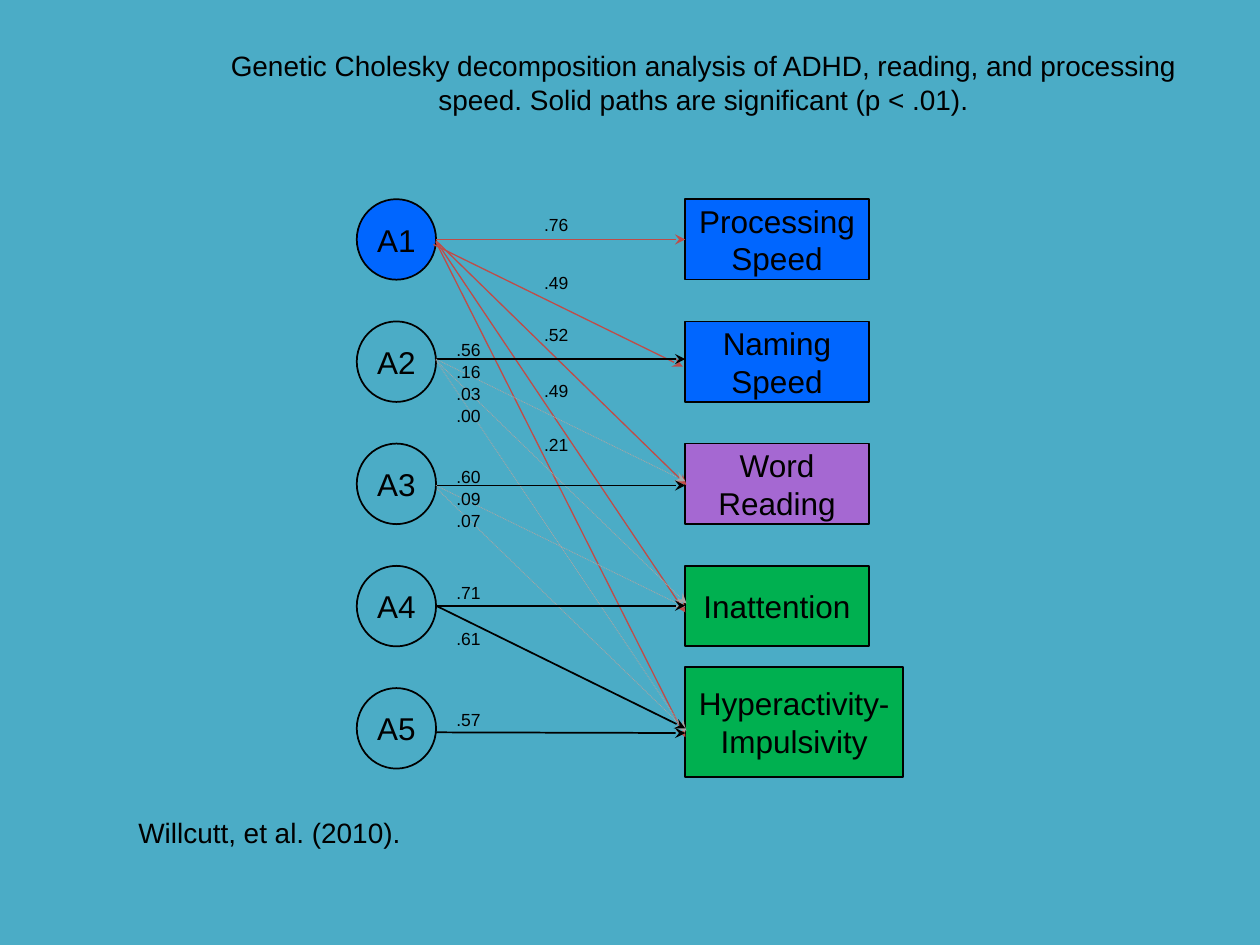
from dataclasses import dataclass, field

from lxml.etree import SubElement
from pptx import Presentation
from pptx.dml.color import RGBColor
from pptx.enum.dml import MSO_LINE as Dash
from pptx.enum.shapes import MSO_CONNECTOR as Link, MSO_SHAPE as Shape
from pptx.enum.text import MSO_ANCHOR as Anchor, MSO_AUTO_SIZE as Fit, PP_ALIGN as Align
from pptx.oxml.ns import qn
from pptx.slide import Slide
from pptx.util import Pt


def colour(code):
    return RGBColor.from_string(code)


@dataclass
class PathDiagram:
    """Draws the parts of a path diagram on one slide, in points."""

    slide: Slide
    ink: str = "000000"
    font: dict = field(default_factory=lambda: {"name": "Arial", "bold": False})

    def backdrop(self, code):
        fill = self.slide.background.fill
        fill.solid()
        fill.fore_color.rgb = colour(code)

    def wording(self, frame, words, size, align, inset, **layout):
        margins = {"margin_left": Pt(inset), "margin_right": Pt(inset)}
        for name, value in {"word_wrap": True, **margins, **layout}.items():
            setattr(frame, name, value)
        paragraph = frame.paragraphs[0]
        paragraph.alignment = align
        run = paragraph.add_run()
        run.text = words
        for name, value in {**self.font, "size": Pt(size)}.items():
            setattr(run.font, name, value)
        run.font.color.rgb = colour(self.ink)

    def text(self, words, bounds, size, align=Align.LEFT, inset=7.2, anchor=Anchor.MIDDLE):
        box = self.slide.shapes.add_textbox(*map(Pt, bounds))
        self.wording(box.text_frame, words, size, align, inset,
                     vertical_anchor=anchor, auto_size=Fit.SHAPE_TO_FIT_TEXT)

    def node(self, kind, words, bounds, fill, inset=7.2):
        node = self.slide.shapes.add_shape(kind, *map(Pt, bounds))
        node.shadow.inherit = False
        if fill:
            node.fill.solid()
            node.fill.fore_color.rgb = colour(fill)
        else:
            node.fill.background()
        node.line.color.rgb = colour(self.ink)
        node.line.width = Pt(1)
        self.wording(node.text_frame, words, 18, Align.CENTER, inset,
                     vertical_anchor=Anchor.MIDDLE)

    def arrow(self, ends, code, width, dash):
        arrow = self.slide.shapes.add_connector(Link.STRAIGHT, *map(Pt, ends))
        arrow.line.color.rgb = colour(code)
        for name, value in {"width": Pt(width), "dash_style": dash}.items():
            setattr(arrow.line, name, value)
        properties = arrow.element.find(qn("p:spPr"))
        SubElement(properties.find(qn("a:ln")), qn("a:tailEnd"), type="stealth")
        SubElement(properties, qn("a:effectLst"))


FIRST_TOP, ROW_STEP, NODE_HEIGHT = 113.8, 69.85, 46
FACTOR_LEFT, FACTOR_WIDTH = 203.9, 45.3
TRAIT_LEFT, TRAIT_WIDTH = 391.5, 105.1
PATH_LEFT, PATH_SPAN = 249.1, 142.5
BLUE, PURPLE, GREEN = "0066FF", "A568D2", "00B050"

SHARED = ("BF4C48", 0.75, None)
SOLID = ("000000", 1, None)
DOTTED = ("A6A6A6", 0.5, Dash.ROUND_DOT)

TRAITS = [("Processing Speed", BLUE), ("Naming Speed", BLUE),
          ("Word Reading", PURPLE), ("Inattention", GREEN)]

PATHS = [
    (SHARED, [(0, 136.8, 136.8), (-1.4, 139.7, 209.5), (0.7, 138.2, 277.2),
              (0, 137.5, 349.9), (0, 138.2, 421.2)]),
    (SOLID, [(0, 205.2, 205.2)]),
    (DOTTED, [(0, 205.2, 275), (0.7, 206.6, 344.9), (0, 205.9, 418.3)]),
    (SOLID, [(0, 277.4, 277.4)]),
    (DOTTED, [(0, 277.4, 347), (0.7, 279.4, 417.6)]),
    (SOLID, [(0, 346.1, 346.1), (0, 346.1, 416.2), (0, 418.5, 418.9)]),
]

LOADINGS = [
    (310.2, [(".76", 118.8), (".49", 151.7), (".52", 181.4), (".49", 213.5), (".21", 244.6)]),
    (260.1, [(".56", 190.3), (".16", 202.8), (".03", 215.4), (".00", 228.2),
             (".60", 262.6), (".09", 275.2), (".07", 287.8),
             (".71", 329), (".61", 355.2), (".57", 401.6)]),
]


def main():
    deck = Presentation()
    deck.slide_width, deck.slide_height = Pt(720), Pt(540)
    diagram = PathDiagram(deck.slides.add_slide(deck.slide_layouts[6]))
    diagram.backdrop("4BACC6")
    diagram.text("Genetic Cholesky decomposition analysis of ADHD, reading, and processing "
                 "speed. Solid paths are significant (p < .01).",
                 (120, 24, 564, 46), 16, Align.CENTER)

    for row in range(5):
        bounds = (FACTOR_LEFT, FIRST_TOP + row * ROW_STEP, FACTOR_WIDTH, NODE_HEIGHT)
        diagram.node(Shape.OVAL, f"A{row + 1}", bounds, None if row else BLUE, inset=1.4)
    for row, (trait, fill) in enumerate(TRAITS):
        bounds = (TRAIT_LEFT, FIRST_TOP + row * ROW_STEP, TRAIT_WIDTH, NODE_HEIGHT)
        diagram.node(Shape.RECTANGLE, trait, bounds, fill)
    diagram.node(Shape.RECTANGLE, "Hyperactivity-Impulsivity",
                 (TRAIT_LEFT, 381, 124.7, 63), GREEN)

    for look, routes in PATHS:
        for shift, start, end in routes:
            left = PATH_LEFT + shift
            diagram.arrow((left, start, left + PATH_SPAN, end), *look)
    for left, column in LOADINGS:
        for loading, top in column:
            diagram.text(loading, (left, top, 18.7, 20), 10, inset=0.7, anchor=Anchor.TOP)

    diagram.text("Willcutt, et al. (2010).", (72, 462.2, 564, 26.6), 16)
    deck.save("out.pptx")


if __name__ == "__main__":
    main()
